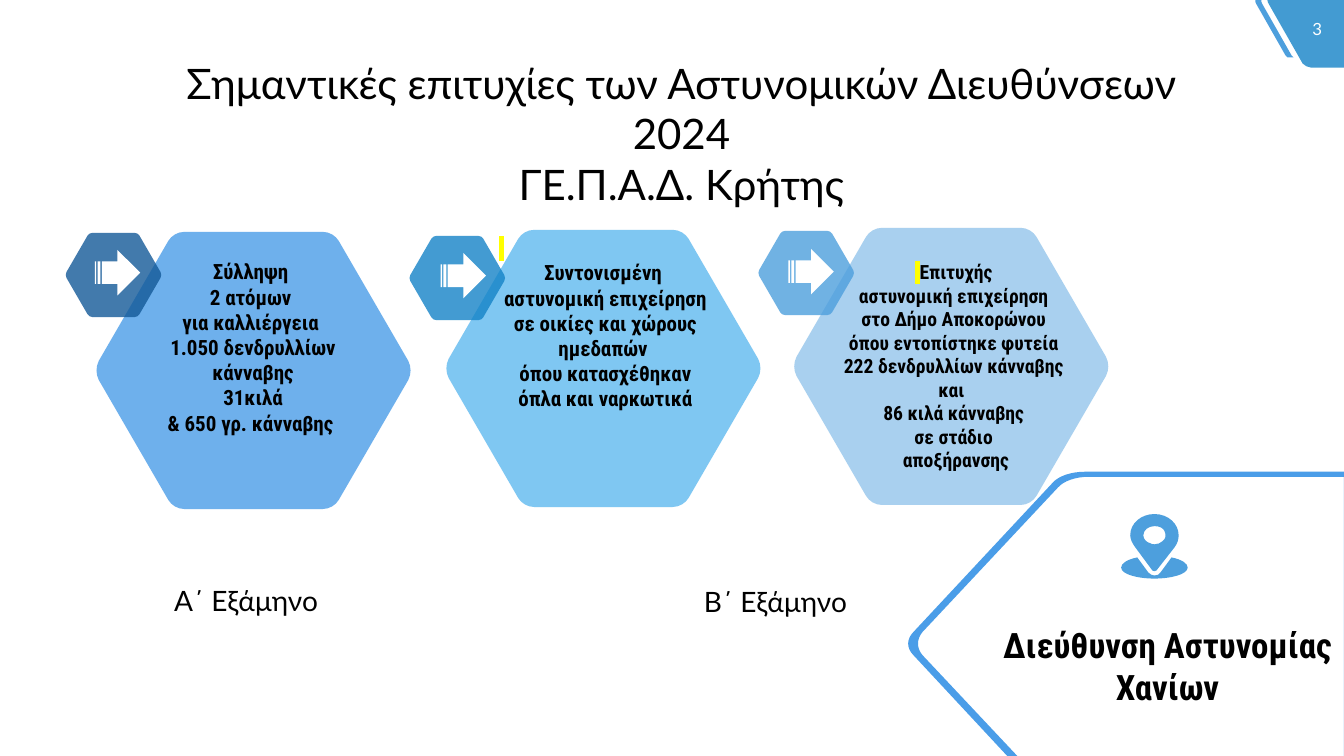
from lxml.etree import SubElement
from pptx import Presentation
from pptx.dml.color import RGBColor
from pptx.enum.shapes import MSO_SHAPE as Preset
from pptx.enum.text import MSO_AUTO_SIZE as AutoSize, PP_ALIGN as Align
from pptx.oxml.ns import qn
from pptx.util import Cm, Pt


def color(value):
    return RGBColor.from_string(value)


def length(inches):
    return Cm(inches * 2.54)


def corners(part):
    """Split a flat run of coordinates into points."""
    return [(length(x), length(y)) for x, y in zip(part[::2], part[1::2])]


class Slide:
    heading, condensed = "Lato", "Roboto Condensed"
    black, white, yellow = "000000", "FFFFFF", "FFFF00"
    blue, sky = "4A9DE8", "4D9FDD"

    def __init__(self, page):
        self.page = page

    def paint(self, shape, fill, opacity=100):
        shape.shadow.inherit = False
        shape.fill.solid()
        shape.fill.fore_color.rgb = color(fill)
        shape.line.fill.background()
        if opacity < 100:
            tint = shape._element.spPr.find(qn("a:solidFill"))[0]
            SubElement(tint, qn("a:alpha"), val=str(opacity * 1000))
        return shape

    def outline(self, contours, fill, opacity=100):
        """Draw contours of points (x, y) and curves (x1, y1, x2, y2, x, y)."""
        builder = None
        for contour in contours:
            start = corners(contour[0])[0]
            if builder is None:
                builder = self.page.shapes.build_freeform(*start)
            else:
                builder.move_to(*start)
            points = [point for part in contour[1:] for point in corners(part)]
            builder.add_line_segments(points, close=True)
        shape = builder.convert_to_shape()
        self.bend(shape, [part for contour in contours for part in contour[1:]])
        return self.paint(shape, fill, opacity)

    def bend(self, shape, parts):
        """Join the three lines that stand for each curve into one curve."""
        lines = iter(list(shape._element.iter(qn("a:lnTo"))))
        for part in parts:
            line = next(lines)
            if len(part) == 6:
                line.tag = qn("a:cubicBezTo")
                for extra in (next(lines), next(lines)):
                    line.append(extra[0])
                    extra.getparent().remove(extra)

    def hexagon(self, left, top, fill, scale=1.0):
        width, height = 3.13, 2.75
        upper_left = [(0.03, 1.28), (0.72, 0.09), (0.75, 0.04, 0.81, 0, 0.88, 0)]
        upper_right = [(width - 0.88, 0),
                       (width - 0.81, 0, width - 0.75, 0.04, width - 0.72, 0.09),
                       (width - 0.03, 1.28)]
        right_tip = [(width, 1.34, width, 1.41, width - 0.03, 1.47)]
        lower_right = [(width - 0.72, height - 0.09),
                       (width - 0.75, height - 0.04, width - 0.81, height, width - 0.88, height)]
        lower_left = [(0.88, height),
                      (0.81, height, 0.75, height - 0.04, 0.72, height - 0.09),
                      (0.03, 1.47), (0, 1.41, 0, 1.34, 0.03, 1.28)]
        unit = upper_left + upper_right + right_tip + lower_right + lower_left
        contour = [tuple(value * scale + (top if index % 2 else left)
                         for index, value in enumerate(part)) for part in unit]
        self.outline([contour], fill, 80)

    def arrow(self, left, top, size=0.45):
        shape = self.page.shapes.add_shape(
            Preset.STRIPED_RIGHT_ARROW, *map(length, (left, top, size, size)))
        self.paint(shape, self.white)

    def text(self, frame, words, size, font, ink=black, bold=False, wrap=True):
        box = self.page.shapes.add_textbox(*map(length, frame))
        box.text_frame.text = words
        box.text_frame.word_wrap = wrap
        box.text_frame.auto_size = AutoSize.SHAPE_TO_FIT_TEXT
        for para in box.text_frame.paragraphs:
            para.alignment = Align.CENTER
            for span in para.runs:
                self.style(span, size, font, ink, bold)
        return box.text_frame

    def style(self, span, size, font, ink, bold):
        span.font.size, span.font.name, span.font.bold = Pt(size), font, bold
        span.font.color.rgb = color(ink)

    def highlight(self, span):
        fill = span._r.rPr.find(qn("a:solidFill"))
        mark = SubElement(span._r.rPr, qn("a:highlight"))
        SubElement(mark, qn("a:srgbClr"), val=self.yellow)
        fill.addnext(mark)


def main():
    deck = Presentation()
    deck.slide_width, deck.slide_height = length(13.33), length(7.5)
    slide = Slide(deck.slides.add_slide(deck.slide_layouts[6]))

    # Page number corner
    slide.outline([[(12.57, 0), (13.33, 0), (13.33, 0.67), (13, 0.67),
                    (12.97, 0.67, 12.94, 0.65, 12.92, 0.63), (12.59, 0.05),
                    (12.58, 0.03, 12.57, 0.02, 12.57, 0)]], "1483C7", 80)
    slide.outline([[(12.45, 0), (12.51, 0), (12.51, 0.01, 12.51, 0.03, 12.52, 0.04),
                    (12.81, 0.55), (12.83, 0.57), (12.77, 0.57), (12.75, 0.55),
                    (12.46, 0.04), (12.45, 0.03, 12.45, 0.01, 12.45, 0)]], slide.sky)
    slide.text((12.86, 0.14, 0.41, 0.3), "3", 12, slide.heading, slide.white, wrap=False)

    # Hexagons with their arrow badges
    for hexagon, fill, badge, badge_fill, arrow in (
            ((4.42, 2.28), "60B9EF", (4.06, 2.34), "1483C7", (4.37, 2.51)),
            ((0.95, 2.3), slide.blue, (0.65, 2.31), "135998", (0.94, 2.48)),
            ((7.87, 2.26), "94C5EB", (7.52, 2.29), slide.sky, (7.82, 2.47))):
        slide.hexagon(*hexagon, fill)
        slide.hexagon(*badge, badge_fill, scale=0.304)
        slide.arrow(*arrow)

    # Title and second half-year
    slide.text((1.26, 0.52, 11, 1.11),
               "Σημαντικές επιτυχίες των Αστυνομικών Διευθύνσεων 2024\vΓΕ.Π.Α.Δ. Κρήτης",
               30, slide.heading)
    slide.text((6.38, 5.75, 2.62, 0.44), "Β΄ Εξάμηνο", 20, slide.heading)

    # Hexagon texts
    operation = slide.text(
        (4.85, 2.28, 2.31, 2.12),
        " \nΣυντονισμένη \nαστυνομική επιχείρηση\n σε οικίες και χώρους \n"
        "ημεδαπών \nόπου κατασχέθηκαν\n όπλα και ναρκωτικά ",
        15, slide.condensed, bold=True)
    operation.paragraphs[0].alignment = Align.LEFT
    slide.highlight(operation.paragraphs[0].runs[0])

    slide.text((1.31, 2.52, 2.4, 1.87),
               "Σύλληψη \n2 ατόμων \nγια καλλιέργεια \n1.050 δενδρυλλίων κάνναβης\n"
               "31κιλά\n& 650 γρ. κάνναβης ",
               15, slide.condensed, bold=True)

    plantation = slide.text(
        (8.18, 2.53, 2.56, 2.22),
        " \nαστυνομική επιχείρηση\nστο Δήμο Αποκορώνου\nόπου εντοπίστηκε φυτεία\n"
        "222 δενδρυλλίων κάνναβης και \n86 κιλά κάνναβης\nσε στάδιο\n αποξήρανσης",
        14, slide.condensed, bold=True)
    first_line = plantation.paragraphs[0]
    slide.highlight(first_line.runs[0])
    span = first_line.add_run()
    span.text = "Επιτυχής"
    slide.style(span, 14, slide.condensed, slide.black, True)

    # First half-year
    slide.text((1.13, 5.74, 2.62, 0.44), "Α΄ Εξάμηνο", 20, slide.heading)

    # Directorate frame
    slide.outline([[(13.33, 7.5), (13.33, 4.73), (10.8, 4.73),
                    (10.67, 4.73, 10.55, 4.77, 10.49, 4.84),
                    (9.15, 6.27), (9.09, 6.34, 9.09, 6.43, 9.15, 6.5), (10.09, 7.5),
                    (9.99, 7.5), (9.06, 6.5), (8.99, 6.43, 8.99, 6.34, 9.06, 6.27),
                    (10.44, 4.79), (10.5, 4.72, 10.63, 4.68, 10.76, 4.68),
                    (13.33, 4.68)]], slide.blue)
    slide.text((9.83, 6.14, 3.5, 0.94), "Διεύθυνση Αστυνομίας Χανίων",
               25, slide.condensed, bold=True)

    # Location pin
    hole = [(11.45, 5.22), (11.5, 5.22, 11.54, 5.24, 11.55, 5.27),
            (11.57, 5.31, 11.56, 5.35, 11.53, 5.37), (11.51, 5.39, 11.48, 5.4, 11.45, 5.4),
            (11.44, 5.4, 11.42, 5.4, 11.41, 5.39), (11.37, 5.38, 11.34, 5.35, 11.34, 5.31),
            (11.34, 5.26, 11.39, 5.22, 11.45, 5.22)]
    drop = [(11.45, 5.1), (11.32, 5.1, 11.21, 5.19, 11.21, 5.31),
            (11.21, 5.35, 11.23, 5.39, 11.26, 5.43), (11.43, 5.66),
            (11.44, 5.67, 11.46, 5.67, 11.47, 5.66), (11.65, 5.43),
            (11.68, 5.39, 11.69, 5.35, 11.69, 5.31), (11.69, 5.2, 11.59, 5.1, 11.45, 5.1)]
    base = [(11.28, 5.53), (11.18, 5.55, 11.12, 5.59, 11.12, 5.63),
            (11.12, 5.7, 11.29, 5.74, 11.45, 5.74), (11.61, 5.74, 11.78, 5.7, 11.78, 5.63),
            (11.78, 5.59, 11.72, 5.55, 11.62, 5.53), (11.51, 5.68),
            (11.5, 5.7, 11.48, 5.71, 11.45, 5.71), (11.43, 5.71, 11.41, 5.7, 11.39, 5.68)]
    pin = [slide.outline(contours, slide.sky) for contours in ([hole, drop], [base])]
    slide.page.shapes.add_group_shape(pin)

    deck.save("out.pptx")


if __name__ == "__main__":
    main()
